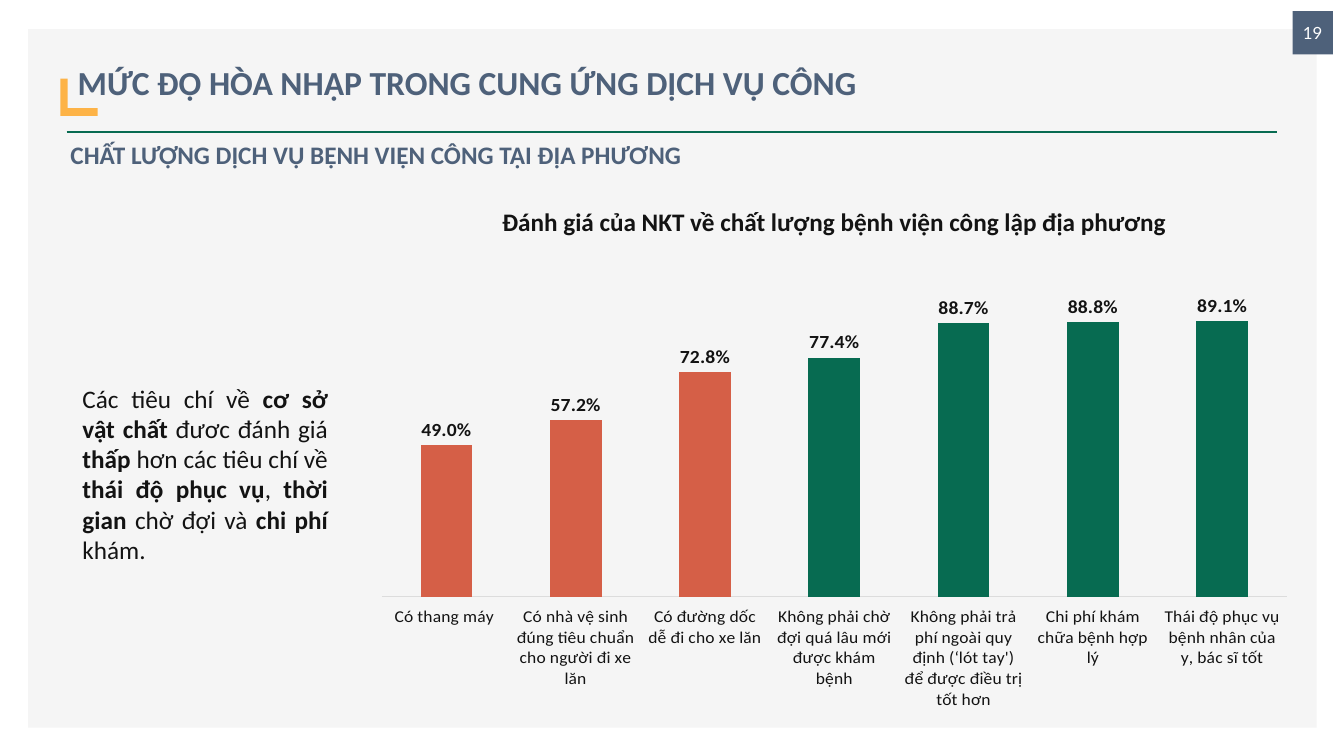
from lxml import etree
from pptx import Presentation
from pptx.chart.data import CategoryChartData
from pptx.dml.color import RGBColor
from pptx.enum.chart import XL_CHART_TYPE as ChartType, XL_LABEL_POSITION as LabelPos
from pptx.enum.chart import XL_TICK_LABEL_POSITION as TickLabel, XL_TICK_MARK as Tick
from pptx.enum.shapes import MSO_CONNECTOR as Connector, MSO_SHAPE as Shape
from pptx.enum.text import MSO_ANCHOR as Anchor, MSO_AUTO_SIZE as AutoSize, PP_ALIGN as Align
from pptx.oxml import parse_xml
from pptx.oxml.ns import nsdecls, qn
from pptx.util import Inches, Pt

PANEL = RGBColor(0xF5, 0xF5, 0xF5)
GREEN = RGBColor(0x07, 0x6B, 0x51)
RED = RGBColor(0xD5, 0x5F, 0x47)
SLATE = RGBColor(0x4E, 0x61, 0x7A)
AMBER = RGBColor(0xFD, 0xB3, 0x47)
INK = RGBColor(0x13, 0x13, 0x13)
GRID = RGBColor(0xDC, 0xDC, 0xDC)
WHITE = RGBColor(0xFF, 0xFF, 0xFF)

RATINGS = [
    ("Có thang máy ", 0.49),
    ("Có nhà vệ sinh đúng tiêu chuẩn cho người đi xe lăn", 0.572),
    ("Có đường dốc dễ đi cho xe lăn", 0.728),
    ("Không phải chờ đợi quá lâu mới được khám bệnh", 0.774),
    ("Không phải trả phí ngoài quy định (‘lót tay') để được điều trị tốt hơn", 0.887),
    ("Chi phí khám chữa bệnh hợp lý", 0.888),
    ("Thái độ phục vụ bệnh nhân của y, bác sĩ tốt", 0.891),
]
FACILITY_COUNT = 3

# Regular and bold pieces alternate, starting with regular.
FINDING = ["Các tiêu chí về ", "cơ sở vật chất ", "đươc đánh giá ", "thấp ",
           "hơn các tiêu chí về ", "thái độ phục vụ", ", ", "thời gian ",
           "chờ đợi và ", "chi phí ", "khám."]


class SlideBuilder:
    font = "Calibri"

    def __init__(self, prs):
        self.s = prs.slides.add_slide(prs.slide_layouts[5])

    def style(self, font, size, color, bold=None, name=None):
        font.name, font.size, font.bold = name or self.font, Pt(size), bold
        font.color.rgb = color

    def rect(self, x, y, w, h, color):
        sp = self.s.shapes.add_shape(Shape.RECTANGLE, Inches(x), Inches(y), Inches(w), Inches(h))
        sp.shadow.inherit = False
        sp.fill.solid()
        sp.fill.fore_color.rgb = color
        sp.line.fill.background()
        return sp

    def badge(self, x, y, w, h, text):
        tf = self.rect(x, y, w, h, SLATE).text_frame
        tf.vertical_anchor = Anchor.MIDDLE
        p = tf.paragraphs[0]
        p.text, p.alignment = text, Align.CENTER
        self.style(p.font, 12, WHITE, name="Lato")

    def rule(self, x1, x2, y):
        line = self.s.shapes.add_connector(
            Connector.STRAIGHT, Inches(x1), Inches(y), Inches(x2), Inches(y))
        line.line.color.rgb, line.line.width = GREEN, Pt(2)
        etree.SubElement(line.element.spPr, qn("a:effectLst"))

    def title(self, x, y, w, h, text):
        sp = self.s.shapes.title
        sp.left, sp.top, sp.width, sp.height = Inches(x), Inches(y), Inches(w), Inches(h)
        sp.fill.solid()
        sp.fill.fore_color.rgb = PANEL
        tf = sp.text_frame
        tf.auto_size, tf.vertical_anchor = AutoSize.NONE, Anchor.MIDDLE
        p = tf.paragraphs[0]
        p.text, p.alignment, p.line_spacing = text, Align.LEFT, 1.5
        self.style(p.font, 24, SLATE, True)
        # The filled title covers part of the amber square, leaving an L.
        sp.element.getparent().append(sp.element)

    def text(self, x, y, w, h, pieces, align, color=INK, bold=None):
        tf = self.s.shapes.add_textbox(Inches(x), Inches(y), Inches(w), Inches(h)).text_frame
        tf.word_wrap = True
        p = tf.paragraphs[0]
        p.alignment = align
        self.style(p.font, 18, color, bold)
        for i, piece in enumerate(pieces):
            r = p.add_run()
            r.text = piece
            if i % 2:
                r.font.bold = True

    def column_chart(self, x, y, w, h, ratings):
        data = CategoryChartData(number_format="0.0%")
        data.categories = [label for label, _ in ratings]
        data.add_series("Series 1", [value for _, value in ratings])
        chart = self.s.shapes.add_chart(
            ChartType.COLUMN_CLUSTERED, Inches(x), Inches(y), Inches(w), Inches(h), data).chart
        chart.has_legend = chart.has_title = False
        self.style(chart.font, 10, INK, name="Arial")

        values = chart.value_axis
        values.minimum_scale, values.maximum_scale = 0, 1
        values.has_major_gridlines = values.visible = False
        cats = chart.category_axis
        cats.major_tick_mark = cats.minor_tick_mark = Tick.NONE
        cats.tick_label_position = TickLabel.LOW
        cats.format.line.color.rgb, cats.format.line.width = GRID, Pt(0.75)
        self.style(cats.tick_labels.font, 12.5, INK)

        plot = chart.plots[0]
        plot.gap_width, plot.overlap, plot.vary_by_categories = 150, -25, False
        series = plot.series[0]
        for i in range(len(ratings)):
            fill = series.points[i].format.fill
            fill.solid()
            fill.fore_color.rgb = RED if i < FACILITY_COUNT else GREEN
        labels = series.data_labels
        labels.show_value, labels.position = True, LabelPos.OUTSIDE_END
        labels.number_format, labels.number_format_is_linked = "0.0%", False
        self.style(labels.font, 14, INK, True)
        self.plot_layout(chart, x=0.022, y=0.026, w=0.956, h=0.755)

    def plot_layout(self, chart, **box):
        """Fix the inner plot area as fractions of the chart."""
        area = chart.element.find(".//" + qn("c:plotArea"))
        for old in area.findall(qn("c:layout")):
            area.remove(old)
        modes = "".join(f'<c:{k}Mode val="edge"/>' for k in "xy")
        sizes = "".join(f'<c:{k} val="{v}"/>' for k, v in box.items())
        area.insert(0, parse_xml(
            f'<c:layout {nsdecls("c")}><c:manualLayout><c:layoutTarget val="inner"/>'
            f'{modes}{sizes}</c:manualLayout></c:layout>'))


def main():
    prs = Presentation()
    prs.slide_width, prs.slide_height = Inches(13.33), Inches(7.5)
    b = SlideBuilder(prs)
    b.rect(0.28, 0.29, 12.78, 6.93, PANEL)
    b.rule(0.66, 12.67, 1.31)
    b.badge(12.82, 0.11, 0.4, 0.43, "19")
    b.rect(0.6, 0.78, 0.37, 0.37, AMBER)
    b.title(0.67, 0.36, 12.07, 0.71, "MỨC ĐỘ HÒA NHẬP TRONG CUNG ỨNG DỊCH VỤ CÔNG")
    b.text(0.6, 1.33, 11.82, 0.4, ["CHẤT LƯỢNG DỊCH VỤ BỆNH VIỆN CÔNG TẠI ĐỊA PHƯƠNG"],
           Align.JUSTIFY, SLATE, True)
    b.text(4.81, 2, 6.93, 0.4, ["Đánh giá của NKT về chất lượng bệnh viện công lập địa phương"],
           Align.CENTER, bold=True)
    b.column_chart(3.58, 2.75, 9.39, 4.3, RATINGS)
    b.text(0.72, 3.75, 2.63, 1.92, FINDING, Align.JUSTIFY)
    prs.save("out.pptx")


if __name__ == "__main__":
    main()
